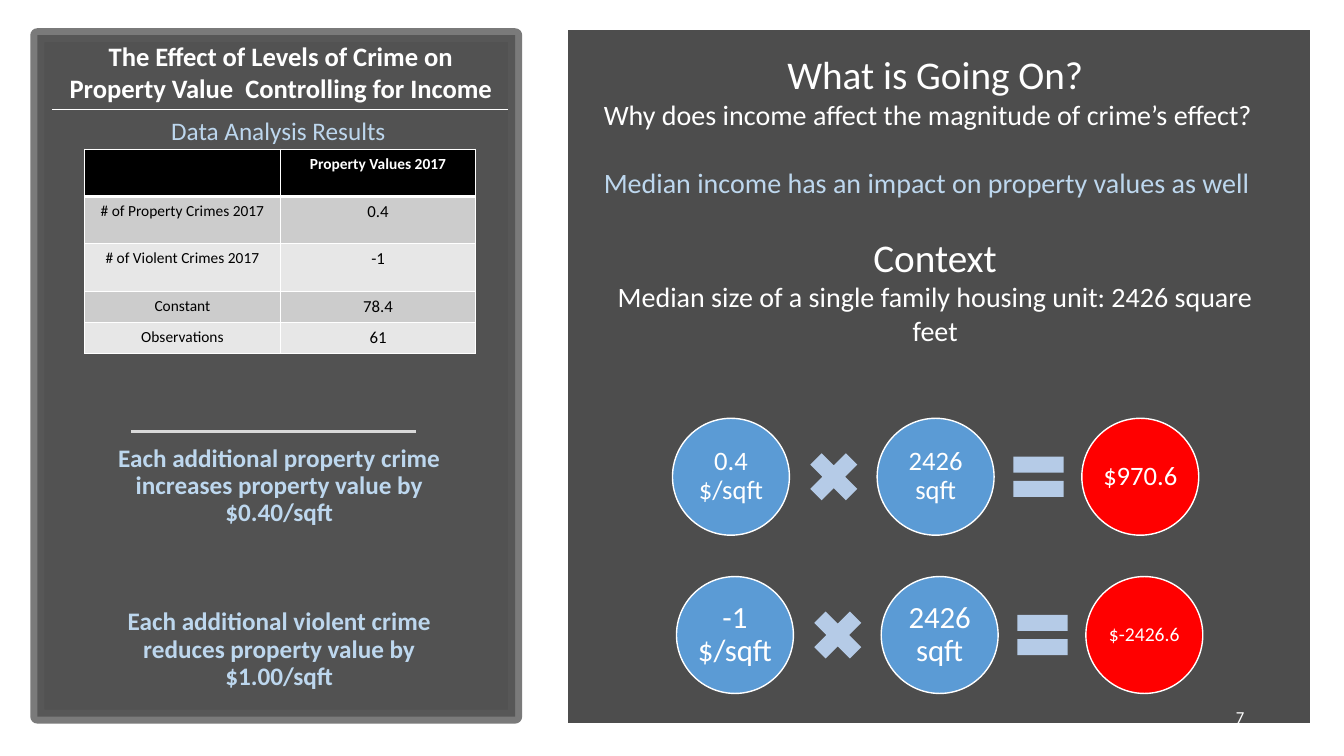
"""Build the slide on crime, income and property value."""
from lxml import etree
from pptx import Presentation
from pptx.dml.color import RGBColor
from pptx.enum.shapes import MSO_CONNECTOR, MSO_SHAPE
from pptx.enum.text import MSO_ANCHOR, MSO_AUTO_SIZE, PP_ALIGN
from pptx.oxml.ns import qn
from pptx.util import Inches, Pt

LEFT, CENTER, RIGHT = PP_ALIGN.LEFT, PP_ALIGN.CENTER, PP_ALIGN.RIGHT
TOP, MIDDLE = MSO_ANCHOR.TOP, MSO_ANCHOR.MIDDLE
RECT, OVAL = MSO_SHAPE.RECTANGLE, MSO_SHAPE.OVAL
TIMES, EQUAL = MSO_SHAPE.MATH_MULTIPLY, MSO_SHAPE.MATH_EQUAL
COLORS = {
    "white": "FFFFFF", "black": "000000", "pale": "BDD7EE", "rule": "D9D9D9",
    "panel": "404040", "frame": "595959", "board": "4D4D4D", "dark": "CCCCCC",
    "light": "E7E7E7", "blue": "5B9BD5", "red": "FF0000", "sign": "B5CBE7",
}
HUES = {name: RGBColor.from_string(code) for name, code in COLORS.items()}


def write(frame, lines, align=CENTER, anchor=TOP, bold=False):
    """Fill a text frame with (text, size, color, space before) lines."""
    frame.word_wrap = True
    frame.vertical_anchor = anchor
    for i, (text, size, color, gap) in enumerate(lines):
        para = frame.add_paragraph() if i else frame.paragraphs[0]
        para.text = text
        para.alignment = align
        para.space_before = Pt(gap)
        para.font.name = "Calibri"
        para.font.size = Pt(size)
        para.font.bold = bold
        para.font.color.rgb = HUES[color]


def draw(kind, x, y, w, h, fill, edge=None, width=1):
    """Add a flat preset shape, with an outline if an edge color is given."""
    shape = slide.shapes.add_shape(kind, Inches(x), Inches(y), Inches(w), Inches(h))
    shape.shadow.inherit = False
    shape.fill.solid()
    shape.fill.fore_color.rgb = HUES[fill]
    if edge:
        shape.line.color.rgb = HUES[edge]
        shape.line.width = Pt(width)
    else:
        shape.line.fill.background()
    return shape


deck = Presentation()
deck.slide_width, deck.slide_height = Inches(13.33), Inches(7.5)
slide = deck.slides.add_slide(deck.slide_layouts[5])

panel = draw(RECT, 0.37, 0.35, 4.74, 6.76, "panel", "frame", 10)
for tint, alpha in zip(panel.element.spPr.iter(qn("a:srgbClr")), (90, 80)):
    etree.SubElement(tint, qn("a:alpha")).set("val", str(alpha * 1000))

title = slide.shapes.title
panel.element.addnext(title.element)
title.left, title.top = Inches(0.77), Inches(4.37)
title.width, title.height = Inches(4), Inches(2.74)
write(title.text_frame, [
    ("Each additional property crime increases property value by $0.40/sqft", 18, "pale", 0),
    ("Each additional violent crime reduces property value by $1.00/sqft", 18, "pale", 58.5),
], bold=True)
title.text_frame.auto_size = MSO_AUTO_SIZE.NONE
for para in title.text_frame.paragraphs:
    para.line_spacing = 0.9

for x, y, end, color, width in ((1.3, 4.28, 4.13, "rule", 1.75),
                                (0.52, 1.09, 5.04, "white", 0.5)):
    rule = slide.shapes.add_connector(
        MSO_CONNECTOR.STRAIGHT, Inches(x), Inches(y), Inches(end), Inches(y))
    rule.line.color.rgb = HUES[color]
    rule.line.width = Pt(width)
    etree.SubElement(rule.element.spPr, qn("a:effectLst"))

rows = [
    ("", "Property Values 2017", 0.47),
    ("# of Property Crimes 2017", "0.4", 0.47),
    ("# of Violent Crimes 2017", "-1", 0.47),
    ("Constant", "78.4", 0.31),
    ("Observations", "61", 0.31),
]
table = slide.shapes.add_table(
    len(rows), 2, Inches(0.84), Inches(1.48), Inches(3.88), Inches(2.03)).table
for r, (*texts, height) in enumerate(rows):
    table.rows[r].height = Inches(height)
    for c, text in enumerate(texts):
        cell = table.cell(r, c)
        head = r == 0
        size = 12 if c and not head else 11
        write(cell.text_frame, [(text, size, "white" if head else "black", 0)], bold=head)
        props = cell._tc.get_or_add_tcPr()
        for side in "LRTB":
            thick = (side == "B" and head) or (side == "T" and r == 1)
            line = etree.SubElement(props, qn("a:ln" + side), w=str(Pt(3 if thick else 1)))
            paint = etree.SubElement(line, qn("a:solidFill"))
            etree.SubElement(paint, qn("a:srgbClr"), val=COLORS["white"])
        cell.fill.solid()
        cell.fill.fore_color.rgb = HUES["black" if head else "dark" if r % 2 else "light"]

draw(RECT, 5.62, 0.28, 7.39, 6.91, "board", "white", 2)

notes = [
    (1.6, 1.09, 2.35, 0.4, LEFT, TOP, False, [("Data Analysis Results", 18, "pale", 0)]),
    (0.52, 0.35, 4.53, 0.74, CENTER, TOP, True, [
        ("The Effect of Levels of Crime on Property Value  Controlling for Income",
         19, "white", 0)]),
    (5.89, 0.45, 6.77, 3.53, CENTER, TOP, False, [
        ("What is Going On?", 28, "white", 0),
        ("Why does income affect the magnitude of crime’s effect?", 20, "white", 0),
        ("Median income has an impact on property values as well", 20, "pale", 24.4),
        ("Context", 28, "white", 24.4),
        ("Median size of a single family housing unit: 2426 square feet", 20, "white", 0)]),
    (9.44, 6.91, 3, 0.4, RIGHT, MIDDLE, False, [("7", 12, "white", 0)]),
]
for x, y, w, h, align, anchor, bold, lines in notes:
    box = slide.shapes.add_textbox(Inches(x), Inches(y), Inches(w), Inches(h))
    write(box.text_frame, lines, align, anchor, bold)
    for para in box.text_frame.paragraphs[1:4:1] if len(lines) > 1 else []:
        if para.font.size == Pt(20):
            para.alignment = LEFT

sums = [
    (6.67, 4.15, [("0.4 $/sqft", 19), ("2426 sqft", 19), ("$970.6", 19)]),
    (6.71, 5.72, [("-1 $/sqft", 22), ("2426 sqft", 22), ("$-2426.6", 14)]),
]
for left, top, terms in sums:
    for i, (text, size) in enumerate(terms):
        x = left + 2.03 * i
        disc = draw(OVAL, x, top, 1.16, 1.16, "red" if i == 2 else "blue", "white")
        frame = disc.text_frame
        write(frame, [(text, size, "white", 0)], anchor=MIDDLE)
        frame.paragraphs[0].line_spacing = 0.9
        frame.margin_left = frame.margin_right = Inches(0.02)
        frame.margin_top = frame.margin_bottom = Inches(0.02)
        if i < 2:
            draw((TIMES, EQUAL)[i], x + 1.26, top + 0.24, 0.68, 0.68, "sign")

deck.save("out.pptx")
